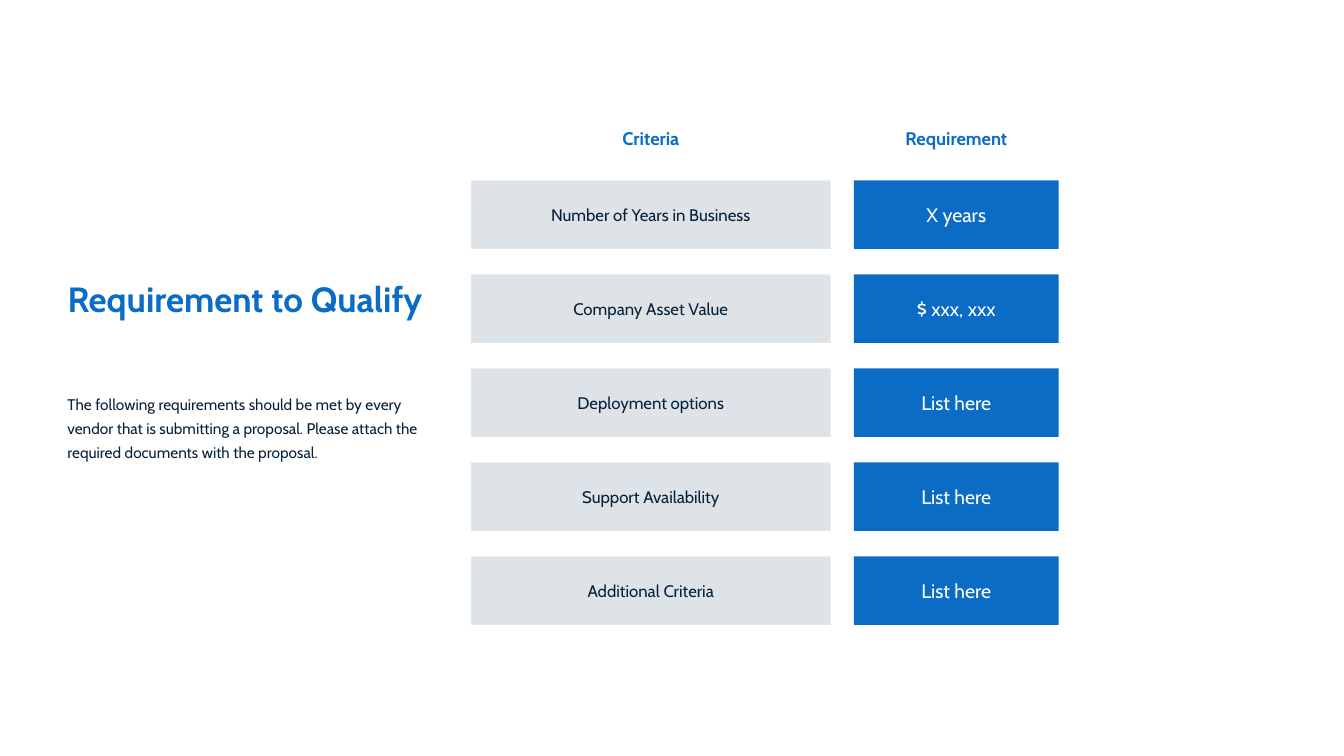
from dataclasses import dataclass

from lxml import etree
from pptx import Presentation
from pptx.dml.color import RGBColor
from pptx.enum.shapes import MSO_SHAPE
from pptx.enum.text import MSO_ANCHOR, MSO_AUTO_SIZE, PP_ALIGN
from pptx.oxml.ns import qn
from pptx.util import Inches, Pt

RECT = MSO_SHAPE.RECTANGLE
LEFT, CENTER = PP_ALIGN.LEFT, PP_ALIGN.CENTER
TOP, MIDDLE = MSO_ANCHOR.TOP, MSO_ANCHOR.MIDDLE
NO_FIT = MSO_AUTO_SIZE.NONE
TITLE_ONLY = 5


@dataclass(frozen=True)
class Theme:
    font: str = "Cabin"
    blue: str = "0B6CC6"
    gray: str = "DEE3E8"
    navy: str = "06223B"
    white: str = "FFFFFF"
    title: int = 25
    head: int = 13
    value: int = 14
    label: int = 12
    body: int = 11


@dataclass(frozen=True)
class Column:
    left: float
    width: float
    head: str
    span: float  # width of the heading box
    fill: str
    ink: str
    size: int
    edge: bool


THEME = Theme()
COLUMNS = (
    Column(4.67, 3.57, "Criteria", 0.83, THEME.gray, THEME.navy,
           THEME.label, True),
    Column(8.47, 2.03, "Requirement", 1.28, THEME.blue, THEME.white,
           THEME.value, False),
)
ROWS = (
    ("Number of Years in Business", "X years"),
    ("Company Asset Value", "$ xxx, xxx"),
    ("Deployment options", "List here"),
    ("Support Availability", "List here"),
    ("Additional Criteria", "List here"),
)
ROW_TOP, ROW_STEP, ROW_HEIGHT = 1.79, 0.9325, 0.68
HEAD_TOP, HEAD_HEIGHT = 1.21, 0.32
SIDE_LEFT, SIDE_WIDTH = 0.57, 3.75
INTRO = ("The following requirements should be met by every vendor that is "
         "submitting a proposal. Please attach the required documents with "
         "the proposal.")


def color(code):
    return RGBColor.from_string(code)


def write(shape, text, size, ink, bold=False, align=LEFT, anchor=TOP,
          wrap=True, lead=None):
    frame = shape.text_frame
    frame.text = text
    frame.word_wrap = wrap
    frame.auto_size = NO_FIT
    frame.vertical_anchor = anchor
    para = frame.paragraphs[0]
    para.alignment = align
    if lead:
        para.line_spacing = Pt(lead)
    font = para.runs[0].font
    font.name = THEME.font
    font.size = Pt(size)
    font.bold = bold
    font.color.rgb = color(ink)


def add_edge(shape):
    """Give the shape a faint white outline."""
    shape.line.width = Pt(1.5)
    shape.line.color.rgb = color(THEME.white)
    tint = shape.line.fill._xPr.find(".//" + qn("a:srgbClr"))
    etree.SubElement(tint, qn("a:alpha"), val="15000")


def add_cell(slide, col, top, text):
    cell = slide.shapes.add_shape(RECT, Inches(col.left), Inches(top),
                                  Inches(col.width), Inches(ROW_HEIGHT))
    cell.shadow.inherit = False
    cell.fill.solid()
    cell.fill.fore_color.rgb = color(col.fill)
    if col.edge:
        add_edge(cell)
    else:
        cell.line.fill.background()
    write(cell, text, col.size, col.ink, align=CENTER, anchor=MIDDLE)


def add_text(slide, left, top, width, height, text, size, ink, **style):
    box = slide.shapes.add_textbox(Inches(left), Inches(top),
                                   Inches(width), Inches(height))
    write(box, text, size, ink, **style)


def set_title(slide, text):
    title = slide.shapes.title
    title.left, title.top = Inches(SIDE_LEFT), Inches(2.65)
    title.width, title.height = Inches(SIDE_WIDTH), Inches(1.03)
    write(title, text, THEME.title, THEME.blue, bold=True, lead=34)


def add_grid(slide):
    for index, col in enumerate(COLUMNS):
        left = col.left + (col.width - col.span) / 2
        add_text(slide, left, HEAD_TOP, col.span, HEAD_HEIGHT, col.head,
                 THEME.head, THEME.blue, bold=True, align=CENTER, wrap=False)
        for row, texts in enumerate(ROWS):
            add_cell(slide, col, ROW_TOP + row * ROW_STEP, texts[index])


def main():
    deck = Presentation()
    deck.slide_width, deck.slide_height = Inches(13.33), Inches(7.5)
    slide = deck.slides.add_slide(deck.slide_layouts[TITLE_ONLY])
    set_title(slide, "Requirement to Qualify")
    add_text(slide, SIDE_LEFT, 3.82, SIDE_WIDTH, 0.8, INTRO,
             THEME.body, THEME.navy, lead=17)
    add_grid(slide)
    deck.save("out.pptx")


if __name__ == "__main__":
    main()
